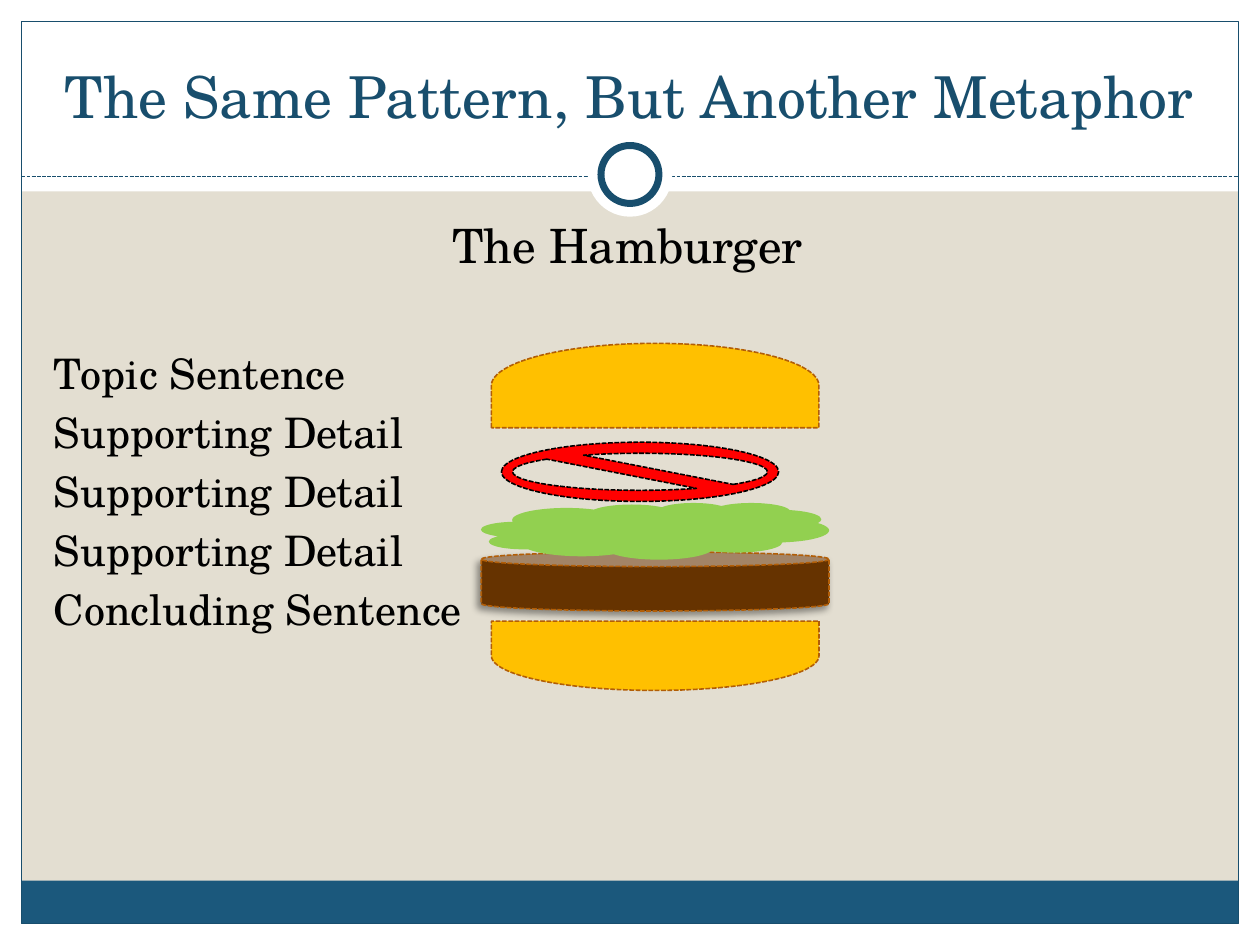
from dataclasses import dataclass
from typing import Optional

from lxml.etree import SubElement
from pptx import Presentation
from pptx.dml.color import RGBColor
from pptx.enum.dml import MSO_LINE as Dash
from pptx.enum.shapes import MSO_CONNECTOR as Conn, MSO_SHAPE as Kind
from pptx.enum.text import MSO_ANCHOR as Anchor, PP_ALIGN as Align
from pptx.oxml.ns import qn
from pptx.util import Inches, Pt

# Grid of 100 columns by 75 rows, each cell a tenth of an inch
COLS, ROWS = 100, 75
EDGE = 1.7
FONT = "TeX Gyre Schola"
WHITE, BLACK, NAVY, BLUE = "FFFFFF", "000000", "184E6D", "1B587C"
SAND, BUN, CRUST = "E3DED1", "FFC000", "B25E07"


@dataclass
class Part:
    kind: Kind
    left: float
    top: float
    wide: float
    high: float
    fill: Optional[str] = None
    line: Optional[str] = None
    width: float = 0.9
    dash: bool = False
    turn: float = 0


def cell(num: float) -> int:
    return Inches(num / 10)


def tint(code: str) -> RGBColor:
    return RGBColor.from_string(code)


def draw(slide, part: Part):
    """Draw one preset shape."""
    box = map(cell, (part.left, part.top, part.wide, part.high))
    shape = slide.shapes.add_shape(part.kind, *box)
    shape.shadow.inherit = False
    shape.rotation = part.turn
    if part.fill:
        shape.fill.solid()
        shape.fill.fore_color.rgb = tint(part.fill)
    else:
        shape.fill.background()
    if part.line:
        style(shape.line, part.line, part.width, part.dash)
    else:
        shape.line.fill.background()
    return shape


def style(line, code: str, width: float, dash: bool) -> None:
    line.color.rgb = tint(code)
    line.width = Pt(width)
    if dash:
        line.dash_style = Dash.SQUARE_DOT


def rule(slide, left: float, right: float, row: float) -> None:
    """Draw a dashed level line."""
    ends = map(cell, (left, row, right, row))
    line = slide.shapes.add_connector(Conn.STRAIGHT, *ends)
    style(line.line, NAVY, 0.75, True)
    SubElement(line._element.spPr, qn("a:effectLst"))


def shade(shape) -> None:
    """Cast a soft shadow to the lower left."""
    glow = SubElement(shape._element.spPr.find(qn("a:effectLst")), qn("a:outerShdw"),
                      blurRad=str(Pt(4)), dist=str(Pt(3)), dir=str(135 * 60000),
                      algn="ctr", rotWithShape="0")
    hue = SubElement(glow, qn("a:srgbClr"), val=BLACK)
    SubElement(hue, qn("a:alpha"), val="40000")


def frame(slide, left: float, top: float, wide: float, high: float, anchor=Anchor.TOP):
    """Add an empty text box and return its text frame."""
    box = slide.shapes.add_textbox(*map(cell, (left, top, wide, high)))
    text = box.text_frame
    text.word_wrap = True
    text.vertical_anchor = anchor
    return text


def write(para, text: str, *, size: float, color: str = BLACK,
          align=Align.LEFT, before: float = 0) -> None:
    para.alignment = align
    para.space_before = Pt(before)
    run = para.add_run()
    run.text = text
    run.font.name = FONT
    run.font.size = Pt(size)
    run.font.color.rgb = tint(color)


def ring(size: float, **form) -> Part:
    """A circle centred on the header rule."""
    return Part(Kind.OVAL, (COLS - size) / 2, 13.85 - size / 2, size, size, WHITE, **form)


def bun(row: float, high: float, turn: float) -> Part:
    """A half bun, turned about its centre."""
    wide, mid = 26, 52
    return Part(Kind.FLOWCHART_DELAY, mid - high / 2, row + (high - wide) / 2,
                high, wide, BUN, CRUST, dash=True, turn=turn)


def main() -> None:
    deck = Presentation()
    deck.slide_width, deck.slide_height = cell(COLS), cell(ROWS)
    slide = deck.slides.add_slide(deck.slide_layouts[6])
    back = slide.background.fill
    back.solid()
    back.fore_color.rgb = tint(SAND)

    # White margins, footer band and border
    inner, tall = COLS - 2 * EDGE, ROWS - 2 * EDGE
    for part in (
        Part(Kind.RECTANGLE, 0, ROWS - EDGE, COLS, EDGE, WHITE),
        Part(Kind.RECTANGLE, 0, 0, COLS, 15.2, WHITE),
        Part(Kind.RECTANGLE, 0, 0, EDGE, ROWS, WHITE),
        Part(Kind.RECTANGLE, COLS - EDGE, 0, EDGE, ROWS, WHITE),
        Part(Kind.RECTANGLE, EDGE, 69.9, inner, 3.4, BLUE),
        Part(Kind.RECTANGLE, EDGE, EDGE, inner, tall, line=NAVY, width=0.75),
    ):
        draw(slide, part)

    # Header rule with its ring
    rule(slide, EDGE, COLS - EDGE, 14)
    draw(slide, ring(6.7))
    draw(slide, ring(4.6, line=NAVY, width=4))

    # Patty lies behind the other layers
    patty = Part(Kind.CAN, 38.2, 43.8, 27.6, 4.7, "663300", CRUST, dash=True)
    shade(draw(slide, patty))

    # Title
    head = frame(slide, 3.3, 2.5, 93.3, 8.3, Anchor.BOTTOM)
    write(head.paragraphs[0], "The Same Pattern, But Another Metaphor",
          size=33, color=NAVY, align=Align.CENTER)

    # Heading and list, with a wide gap above the first item
    body = frame(slide, 3.3, 16.7, 93, 50)
    write(body.paragraphs[0], "The Hamburger", size=27, align=Align.CENTER, before=5.4)
    items = ["Topic Sentence", *["Supporting Detail"] * 3, "Concluding Sentence"]
    for num, item in enumerate(items):
        write(body.add_paragraph(), item, size=24, before=4.8 if num else 42.6)

    # Buns, lettuce and tomato
    for part in (
        bun(27.25, 6.7, 270),
        bun(49.3, 5.5, 90),
        Part(Kind.CLOUD, 38.2, 39.9, 27.6, 4.5, "92D050"),
        Part(Kind.NO_SYMBOL, 39.8, 35.1, 22, 4.7, "FF0000", BLACK, dash=True),
    ):
        draw(slide, part)

    deck.save("out.pptx")


if __name__ == "__main__":
    main()
